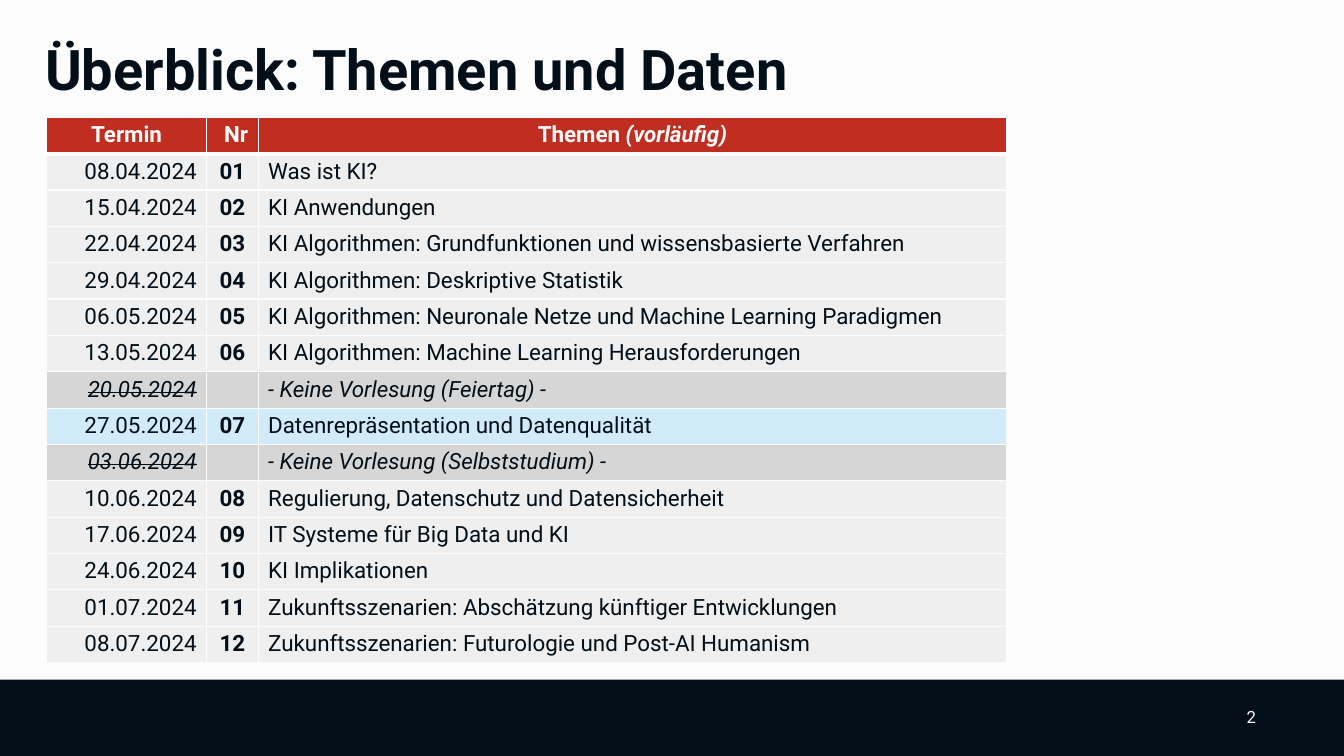
from lxml import etree
from pptx import Presentation
from pptx.dml.color import RGBColor
from pptx.enum.shapes import MSO_SHAPE
from pptx.enum.text import MSO_ANCHOR, PP_ALIGN
from pptx.oxml.ns import qn
from pptx.util import Pt

LEFT, CENTER, RIGHT = PP_ALIGN.LEFT, PP_ALIGN.CENTER, PP_ALIGN.RIGHT
MIDDLE = MSO_ANCHOR.MIDDLE
RECTANGLE = MSO_SHAPE.RECTANGLE


class Theme:
    font = "Roboto"
    dark = "020F18"
    light = "FCFCFC"
    header = "BF2E20"
    row = "EFEFEF"
    cancelled = "D6D6D6"
    current = "D2EBFB"
    title_size = 40
    table_size = 16
    number_size = 12


def write(frame, text, size=Theme.table_size, color=Theme.dark, bold=False,
          italic=False, strike=False, align=LEFT):
    paragraph = frame.paragraphs[0]
    paragraph.alignment = align
    if not text:
        end = etree.SubElement(paragraph._p, qn("a:endParaRPr"))
        end.set("sz", str(size * 100))
        return
    run = paragraph.add_run()
    run.text = text
    run.font.name = Theme.font
    run.font.size = Pt(size)
    run.font.bold = bold
    run.font.italic = italic
    run.font.color.rgb = RGBColor.from_string(color)
    if strike:
        run.font._element.set("strike", "sngStrike")


def style_cell(cell, fill, top=1, bottom=1):
    cell.margin_top = cell.margin_bottom = Pt(3.4)
    properties = cell._tc.get_or_add_tcPr()
    for side, width in (("lnL", 1), ("lnR", 1), ("lnT", top), ("lnB", bottom)):
        line = etree.SubElement(properties, qn(f"a:{side}"), w=str(Pt(width)))
        solid = etree.SubElement(line, qn("a:solidFill"))
        etree.SubElement(solid, qn("a:srgbClr"), val=Theme.light)
    cell.fill.solid()
    cell.fill.fore_color.rgb = RGBColor.from_string(fill)


presentation = Presentation()
presentation.slide_width = Pt(960)
presentation.slide_height = Pt(540)
slide = presentation.slides.add_slide(presentation.slide_layouts[6])
slide.background.fill.solid()
slide.background.fill.fore_color.rgb = RGBColor.from_string(Theme.light)

footer = slide.shapes.add_shape(RECTANGLE, Pt(0), Pt(485.5), Pt(960), Pt(54.5))
footer.shadow.inherit = False
footer.fill.solid()
footer.fill.fore_color.rgb = RGBColor.from_string(Theme.dark)
footer.line.fill.background()

labels = [
    ("Überblick: Themen und Daten", (25.2, 13.7, 828, 70.6),
     {"size": Theme.title_size, "bold": True}),
    ("2", (883.4, 497.5, 43.2, 28.8),
     {"size": Theme.number_size, "color": Theme.light}),
]
for text, box, text_format in labels:
    frame = slide.shapes.add_textbox(*map(Pt, box)).text_frame
    frame.word_wrap = True
    frame.vertical_anchor = MIDDLE
    write(frame, text, **text_format)

lectures = [
    ("08.04.2024", "01", "Was ist KI?"),
    ("15.04.2024", "02", "KI Anwendungen"),
    ("22.04.2024", "03", "KI Algorithmen: Grundfunktionen und wissensbasierte Verfahren"),
    ("29.04.2024", "04", "KI Algorithmen: Deskriptive Statistik"),
    ("06.05.2024", "05", "KI Algorithmen: Neuronale Netze und Machine Learning Paradigmen"),
    ("13.05.2024", "06", "KI Algorithmen: Machine Learning Herausforderungen"),
    ("20.05.2024", "", "- Keine Vorlesung (Feiertag) -"),
    ("27.05.2024", "07", "Datenrepräsentation und Datenqualität"),
    ("03.06.2024", "", "- Keine Vorlesung (Selbststudium) -"),
    ("10.06.2024", "08", "Regulierung, Datenschutz und Datensicherheit"),
    ("17.06.2024", "09", "IT Systeme für Big Data und KI"),
    ("24.06.2024", "10", "KI Implikationen"),
    ("01.07.2024", "11", "Zukunftsszenarien: Abschätzung künftiger Entwicklungen"),
    ("08.07.2024", "12", "Zukunftsszenarien: Futurologie und Post-AI Humanism"),
]
current_number = "07"
row_height = 25.8
row_count = len(lectures) + 1

table = slide.shapes.add_table(row_count, 3, Pt(33.2), Pt(83.8), Pt(686),
                               Pt(row_height * row_count)).table
table.first_row = True
table.horz_banding = False
for column, width in zip(table.columns, (114.5, 36.7, 534.8)):
    column.width = Pt(width)
for row in table.rows:
    row.height = Pt(row_height)

headings = (("Termin", CENTER), ("Nr", RIGHT), ("Themen ", CENTER))
for cell, (heading, align) in zip(table.rows[0].cells, headings):
    style_cell(cell, Theme.header, bottom=3)
    write(cell.text_frame, heading, color=Theme.light, bold=True, align=align)
write(table.cell(0, 2).text_frame, "(vorläufig)", color=Theme.light, bold=True,
      italic=True, align=CENTER)

for index, (date, number, topic) in enumerate(lectures, start=1):
    cancelled = not number
    fill = Theme.row
    if cancelled:
        fill = Theme.cancelled
    elif number == current_number:
        fill = Theme.current
    for cell in table.rows[index].cells:
        style_cell(cell, fill, top=3 if index == 1 else 1)
    date_cell, number_cell, topic_cell = table.rows[index].cells
    write(date_cell.text_frame, date, italic=cancelled, strike=cancelled, align=RIGHT)
    write(number_cell.text_frame, number, bold=True, align=CENTER)
    write(topic_cell.text_frame, topic, italic=cancelled)

presentation.save("out.pptx")
